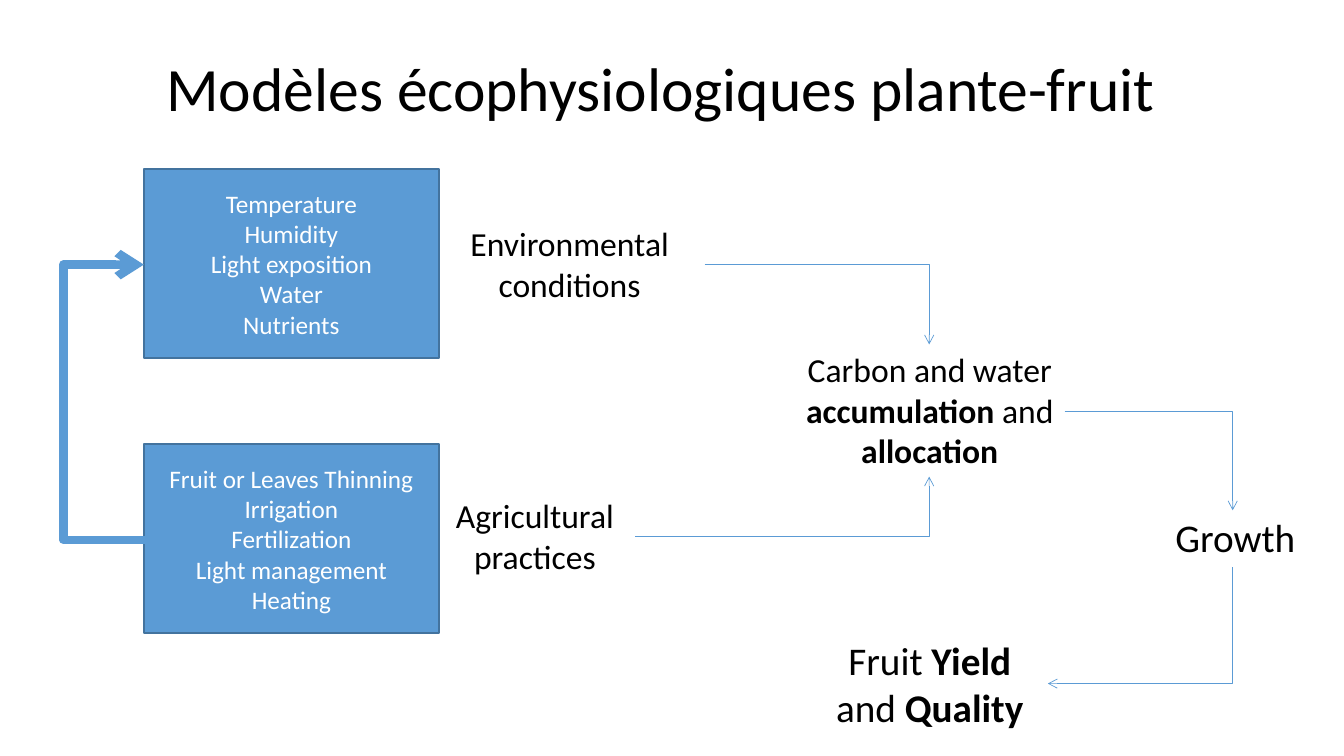
from lxml.etree import SubElement
from pptx import Presentation
from pptx.dml.color import RGBColor
from pptx.enum.shapes import MSO_CONNECTOR, MSO_SHAPE
from pptx.enum.text import MSO_ANCHOR, MSO_AUTO_SIZE, PP_ALIGN
from pptx.oxml.ns import qn
from pptx.util import Pt

EMU_PER_PX = 9525
BLACK = RGBColor(0x00, 0x00, 0x00)
WHITE = RGBColor(0xFF, 0xFF, 0xFF)
BLUE = RGBColor(0x5B, 0x9B, 0xD5)
DARK_BLUE = RGBColor(0x43, 0x73, 0x9E)


def px(*lengths):
    return [round(length * EMU_PER_PX) for length in lengths]


class DiagramSlide:
    """Draw the elements of a flow diagram on one slide in one style."""

    font_name = "Calibri"

    def __init__(self, presentation):
        self.slide = presentation.slides.add_slide(presentation.slide_layouts[5])

    def fill_text(self, shape, paragraphs, size, color=BLACK, anchor=MSO_ANCHOR.TOP):
        frame = shape.text_frame
        frame_format = {
            "word_wrap": True,
            "auto_size": MSO_AUTO_SIZE.NONE,
            "vertical_anchor": anchor,
        }
        for name, value in frame_format.items():
            setattr(frame, name, value)
        for index, runs in enumerate(paragraphs):
            paragraph = frame.add_paragraph() if index else frame.paragraphs[0]
            paragraph.alignment = PP_ALIGN.CENTER
            for text, bold in runs:
                run = paragraph.add_run()
                run.text = text
                font_format = {"name": self.font_name, "size": Pt(size), "bold": bold}
                for name, value in font_format.items():
                    setattr(run.font, name, value)
                run.font.color.rgb = color

    def title(self, text, bounds):
        title = self.slide.shapes.title
        for name, value in zip(("left", "top", "width", "height"), px(*bounds)):
            setattr(title, name, value)
        self.fill_text(title, [[(text, False)]], 44, anchor=MSO_ANCHOR.MIDDLE)

    def label(self, paragraphs, bounds, size):
        self.fill_text(self.slide.shapes.add_textbox(*px(*bounds)), paragraphs, size)

    def box(self, lines, bounds):
        shape = self.slide.shapes.add_shape(MSO_SHAPE.RECTANGLE, *px(*bounds))
        shape.shadow.inherit = False
        shape.fill.solid()
        shape.fill.fore_color.rgb = BLUE
        shape.line.color.rgb = DARK_BLUE
        shape.line.width = Pt(1)
        paragraphs = [[(line, False)] for line in lines]
        self.fill_text(shape, paragraphs, 18, WHITE, MSO_ANCHOR.MIDDLE)

    def arrow(self, begin, end, width=0.5, quarter_turns=0, bend_x=None):
        center_x, center_y = (begin[0] + end[0]) / 2, (begin[1] + end[1]) / 2
        half_x, half_y = end[0] - center_x, end[1] - center_y
        for _ in range(quarter_turns):
            half_x, half_y = half_y, -half_x
        connector = self.slide.shapes.add_connector(
            MSO_CONNECTOR.ELBOW,
            *px(center_x - half_x, center_y - half_y, center_x + half_x, center_y + half_y),
        )
        connector.line.color.rgb = BLUE
        connector.line.width = Pt(width)
        properties = connector._element.spPr
        if quarter_turns:
            properties.find(qn("a:xfrm")).set("rot", str(quarter_turns * 5400000))
        geometry = properties.find(qn("a:prstGeom"))
        if bend_x is None:
            geometry.set("prst", "bentConnector2")
        else:
            share = round((bend_x - begin[0]) / (end[0] - begin[0]) * 100000)
            adjustments = geometry.find(qn("a:avLst"))
            SubElement(adjustments, qn("a:gd"), name="adj1", fmla=f"val {share}")
        SubElement(properties.find(qn("a:ln")), qn("a:tailEnd"), type="arrow")
        SubElement(properties, qn("a:effectLst"))


def main():
    presentation = Presentation()
    presentation.slide_width, presentation.slide_height = px(1280, 720)
    diagram = DiagramSlide(presentation)

    diagram.title("Modèles écophysiologiques plante-fruit", (137, 42, 985, 81))

    diagram.label([[("Growth", False)]], (1071, 484, 211, 55), 28)
    diagram.label(
        [[("Carbon and water ", False), ("accumulation ", True),
          ("and ", False), ("allocation", True)]],
        (757, 328, 257, 126), 24,
    )
    diagram.label([[("Environmental conditions", False)]], (414, 208, 257, 87), 24)
    diagram.label(
        [[("Agricultural", False)], [("practices", False)]], (414, 467, 191, 87), 24
    )
    diagram.label(
        [[("Fruit ", False), ("Yield ", True), ("and ", False), ("Quality", True)]],
        (772, 601, 227, 100), 28,
    )

    factors = [
        (161, ["Temperature", "Humidity", "Light exposition", "Water", "Nutrients"]),
        (423, ["Fruit or Leaves Thinning", "Irrigation", "Fertilization",
               "Light management", "Heating"]),
    ]
    for top, lines in factors:
        diagram.box(lines, (137, top, 281, 180))

    diagram.arrow((671, 252), (885, 328))
    diagram.arrow((605, 511), (885, 454))
    diagram.arrow((1014, 392), (1174, 486))
    diagram.arrow((1174, 540), (998, 651), quarter_turns=1)
    diagram.arrow((138, 514), (137, 252), width=6, quarter_turns=2, bend_x=59)

    presentation.save("out.pptx")


if __name__ == "__main__":
    main()
